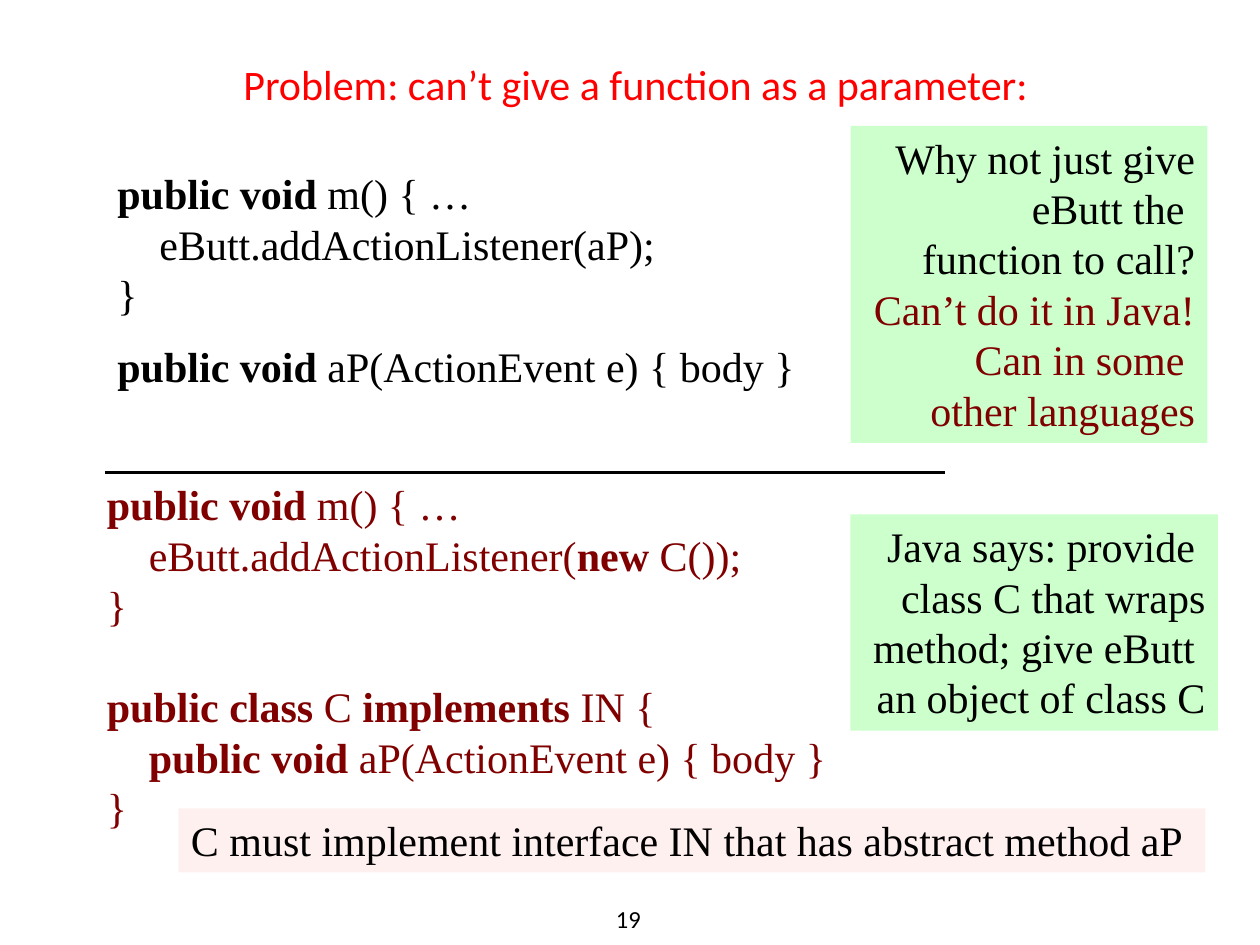
import dataclasses

import pptx
import pptx.dml.color
import pptx.enum.shapes
import pptx.enum.text
import pptx.oxml
import pptx.util

ALIGN = pptx.enum.text.PP_ALIGN
ANCHOR = pptx.enum.text.MSO_ANCHOR
COLUMNS, ROWS = 120, 90


@dataclasses.dataclass(frozen=True)
class Theme:
    heading_font: str = "Calibri"
    body_font: str = "Times New Roman"
    body_size: int = 24
    number_size: int = 14
    paragraph_gap: int = 12
    code_indent: int = 24
    blank_line: int = 29
    rule_width: int = 2
    black: str = "000000"
    red: str = "FF0000"
    maroon: str = "800000"
    green: str = "CCFFCC"
    pink: str = "FFF0F0"


THEME = Theme()


def rgb(value):
    return pptx.dml.color.RGBColor.from_string(value)


def grid(prs, left, top, width, height):
    x, y = prs.slide_width / COLUMNS, prs.slide_height / ROWS
    return [round(v) for v in (left * x, top * y, width * x, height * y)]


def add_text(tf, text, *, font=THEME.body_font, size=THEME.body_size,
             color=THEME.black, align=ALIGN.LEFT, before=0, indent=0):
    p = tf.paragraphs[0]
    if p.runs:
        p = tf.add_paragraph()
    p.alignment = align
    p.space_before = pptx.util.Pt(before)
    if indent:
        p._p.get_or_add_pPr().set("marL", str(pptx.util.Pt(indent)))
    for i, line in enumerate(text.split("\n")):
        if i:
            p.add_line_break()
        for j, part in enumerate(line.split("**")):
            if part:
                r = p.add_run()
                r.text = part
                r.font.name = font
                r.font.size = pptx.util.Pt(size)
                r.font.bold = j % 2 == 1
                r.font.color.rgb = rgb(color)


def text_frame(s, box, wrap=True, anchor=ANCHOR.TOP):
    tf = s.shapes.add_textbox(*box).text_frame
    tf.word_wrap = wrap
    tf.vertical_anchor = anchor
    return tf


def add_title(s, box, text):
    add_text(text_frame(s, box), text, font=THEME.heading_font, color=THEME.red)


def add_code(s, box, lines, color):
    tf = text_frame(s, box)
    for text, before, indent in lines:
        add_text(tf, text, color=color, before=before, indent=indent)


def add_note(s, box, paragraphs, fill, align=ALIGN.RIGHT, wrap=True):
    sp = s.shapes.add_shape(pptx.enum.shapes.MSO_SHAPE.RECTANGLE, *box)
    sp.shadow.inherit = False
    sp.fill.solid()
    sp.fill.fore_color.rgb = rgb(fill)
    sp.line.fill.background()
    tf = sp.text_frame
    tf.word_wrap = wrap
    tf.vertical_anchor = ANCHOR.TOP
    for text, color in paragraphs:
        add_text(tf, text, color=color, align=align)


def add_divider(s, box):
    left, top, width, height = box
    c = s.shapes.add_connector(pptx.enum.shapes.MSO_CONNECTOR.STRAIGHT,
                               left, top, left + width, top + height)
    c.line.color.rgb = rgb(THEME.black)
    c.line.width = pptx.util.Pt(THEME.rule_width)
    c._element.spPr.append(pptx.oxml.parse_xml(
        '<a:effectLst xmlns:a="http://schemas.openxmlformats.org/drawingml/2006/main"/>'))


def add_page_number(s, box, text):
    tf = text_frame(s, box, wrap=False, anchor=ANCHOR.BOTTOM)
    tf.margin_left = tf.margin_right = tf.margin_top = tf.margin_bottom = 0
    add_text(tf, text, font=THEME.heading_font, size=THEME.number_size,
             align=ALIGN.CENTER)


def main():
    prs = pptx.Presentation()
    prs.slide_width = pptx.util.Inches(10)
    prs.slide_height = pptx.util.Inches(7.5)
    s = prs.slides.add_slide(prs.slide_layouts[6])
    gap, indent = THEME.paragraph_gap, THEME.code_indent

    add_page_number(s, grid(prs, 58.3, 85.7, 3.1, 3.2), "19")
    add_title(s, grid(prs, 22, 5, 78, 6.1),
              "Problem: can’t give a function as a parameter:")
    add_code(s, grid(prs, 10, 15.4, 69, 22.7), [
        ("**public void** m() { …", gap, 0),
        ("eButt.addActionListener(aP);", 0, indent),
        ("}", 0, 0),
        ("**public void** aP(ActionEvent e) { body }", gap, 0),
    ], THEME.black)
    add_note(s, grid(prs, 81, 12, 34, 30.2), [
        ("Why not just give eButt the \nfunction to call?", THEME.black),
        ("Can’t do it in Java!", THEME.maroon),
        ("Can in some \nother languages", THEME.maroon),
    ], THEME.green)
    add_code(s, grid(prs, 9, 45, 71, 35.2), [
        ("**public void** m() { …", gap, 0),
        ("eButt.addActionListener(**new** C());", 0, indent),
        ("}", 0, 0),
        ("**public class** C **implements** IN {", THEME.blank_line, 0),
        ("**public void** aP(ActionEvent e) { body }", 0, indent),
        ("}", 0, 0),
    ], THEME.maroon)
    add_note(s, grid(prs, 81, 49, 35, 20.6), [
        ("Java says: provide \nclass C that wraps method; give eButt \n"
         "an object of class C", THEME.black),
    ], THEME.green)
    add_divider(s, grid(prs, 10, 45, 80, 0))
    add_note(s, grid(prs, 17, 77, 97.8, 6.1), [
        ("C must implement interface IN that has abstract method aP", THEME.black),
    ], THEME.pink, align=ALIGN.LEFT, wrap=False)

    prs.save("out.pptx")


if __name__ == "__main__":
    main()
